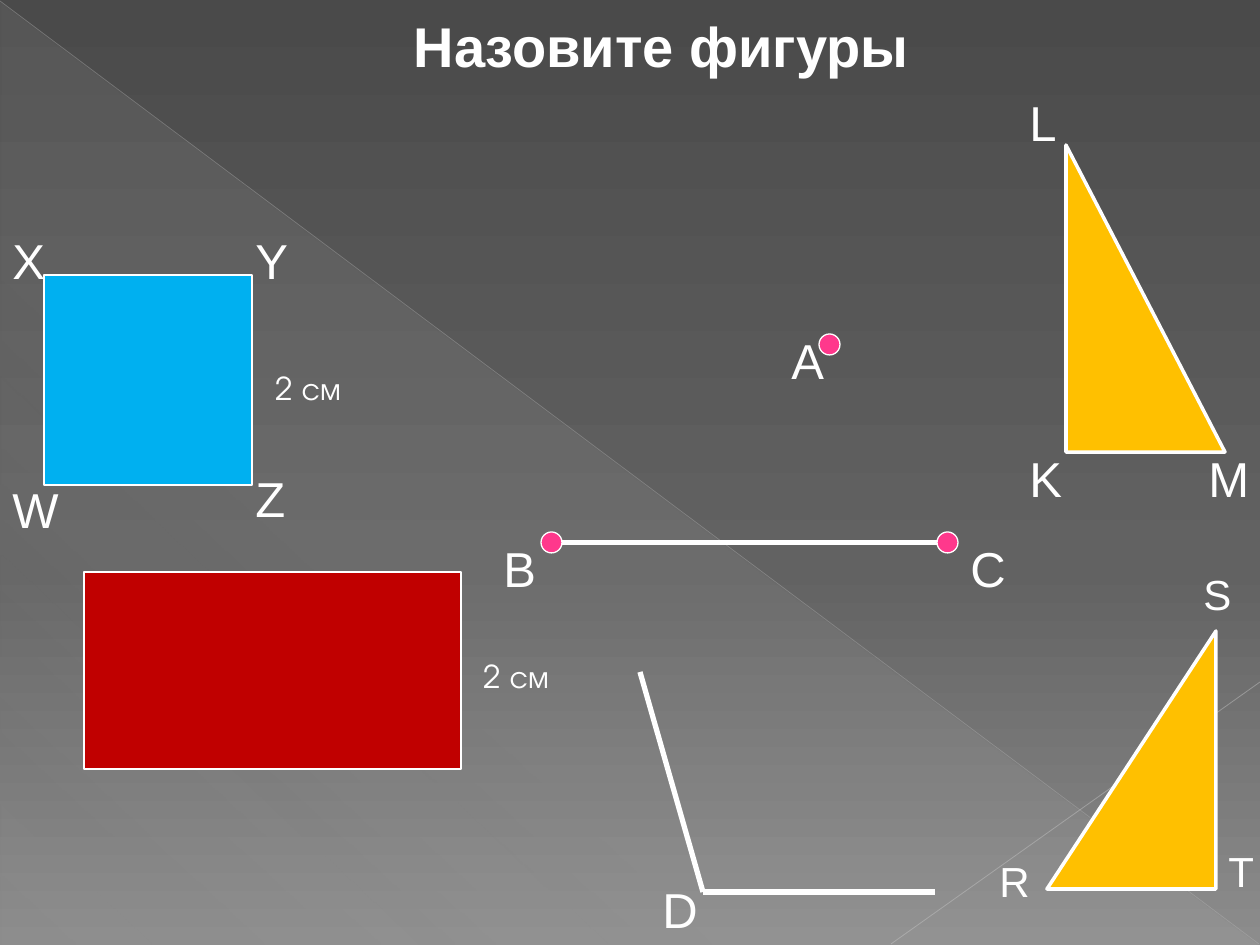
from lxml.etree import SubElement
from pptx import Presentation
from pptx.dml.color import RGBColor
from pptx.enum.shapes import MSO_CONNECTOR, MSO_SHAPE
from pptx.enum.text import MSO_ANCHOR, PP_ALIGN
from pptx.oxml.ns import qn
from pptx.util import Emu, Pt

WHITE, PINK, AMBER = "FFFFFF", "FF388C", "FFC000"
BLUE, RED = "00B0F0", "C00000"
W, H = 1260, 945
DOT = 21


def px(n):
    return Emu(round(n * 914400 / 126))


def color(value):
    return RGBColor.from_string(value)


def set_alpha(clr, percent):
    SubElement(clr, qn("a:alpha")).set("val", str(percent * 1000))


def set_gradient(fill, element, stops, angle):
    """Fill with (position, colour, opacity) stops, angle clockwise."""
    fill.gradient()
    grad = next(element.iter(qn("a:gradFill")))
    gs_list = grad.find(qn("a:gsLst"))
    for gs in list(gs_list):
        gs_list.remove(gs)
    for pos, value, opacity in stops:
        gs = SubElement(gs_list, qn("a:gs"))
        gs.set("pos", str(pos * 1000))
        clr = SubElement(gs, qn("a:srgbClr"))
        clr.set("val", value)
        if opacity < 100:
            set_alpha(clr, opacity)
    grad.find(qn("a:lin")).set("ang", str(angle * 60000))


def write(tf, text, size=28, font="Arial", bold=False, align=PP_ALIGN.LEFT):
    tf.word_wrap = True
    tf.vertical_anchor = MSO_ANCHOR.TOP
    p = tf.paragraphs[0]
    p.alignment = align
    r = p.add_run()
    r.text = text
    r.font.size, r.font.name, r.font.bold = Pt(size), font, bold
    r.font.color.rgb = color(WHITE)


def add_label(slide, text, x, y, w, size=28, font="Arial"):
    h = {28: 72, 24: 63, 18: 50}[size]
    tb = slide.shapes.add_textbox(px(x), px(y), px(w), px(h))
    write(tb.text_frame, text, size=size, font=font)


def add_line(slide, x1, y1, x2, y2, value=WHITE, width=3, opacity=100):
    c = slide.shapes.add_connector(
        MSO_CONNECTOR.STRAIGHT, px(x1), px(y1), px(x2), px(y2))
    c.line.color.rgb = color(value)
    c.line.width = Pt(width)
    if opacity < 100:
        set_alpha(next(c._element.iter(qn("a:srgbClr"))), opacity)
    SubElement(c._element.spPr, qn("a:effectLst"))


def add_figure(slide, kind, x, y, w, h, fill, width=0.75, flip=False):
    s = slide.shapes.add_shape(kind, px(x), px(y), px(w), px(h))
    s.shadow.inherit = False
    s.fill.solid()
    s.fill.fore_color.rgb = color(fill)
    s.line.color.rgb = color(WHITE)
    s.line.width = Pt(width)
    if flip:
        s._element.spPr.xfrm.set("flipH", "1")


def add_labels(slide, x, y, labels, **fmt):
    """Place (text, dx, dy, width) labels around the corner x, y."""
    for text, dx, dy, w in labels:
        add_label(slide, text, x + dx, y + dy, w, **fmt)


def build_background(slide):
    set_gradient(slide.background.fill, slide._element,
                 [(0, "4A4A4A", 100), (60, "626262", 100), (100, "8C8C8C", 100)], 90)
    s = slide.shapes.add_shape(MSO_SHAPE.RIGHT_TRIANGLE, px(1), px(2), px(W - 2), px(H - 2))
    s.shadow.inherit = False
    s.line.fill.background()
    set_gradient(s.fill, s._element,
                 [(0, "D2D2D2", 10), (70, "D2D2D2", 8), (100, "D2D2D2", 1)], 133)
    add_line(slide, 0, 1, W - 1, H - 1, "BFBFBF", 0.39, 35)
    add_line(slide, W, 682, 891, H - 1, "C6C6C6", 0.47, 45)


def build_title(slide, x, y, w, h):
    title = slide.shapes.title
    title.left, title.top, title.width, title.height = px(x), px(y), px(w), px(h)
    title.text_frame.margin_top = px(11)
    write(title.text_frame, "Назовите фигуры", size=32, bold=True, align=PP_ALIGN.CENTER)
    slide.shapes._spTree.append(title._element)  # in front of the background


def build_rectangle(slide, x, y, w, h, fill, side_label, corners=()):
    add_figure(slide, MSO_SHAPE.RECTANGLE, x, y, w, h, fill)
    add_labels(slide, x, y, corners)
    add_labels(slide, x, y, [side_label], size=18, font="TeX Gyre Adventor")


def build_triangle(slide, x, y, w, h, corners, size=28, flip=False):
    add_figure(slide, MSO_SHAPE.RIGHT_TRIANGLE, x, y, w, h, AMBER, 2, flip)
    add_labels(slide, x, y, corners, size=size)


def build_point(slide, x, y, label):
    add_figure(slide, MSO_SHAPE.OVAL, x, y, DOT, DOT, PINK)
    add_labels(slide, x, y, [label])


def build_segment(slide, x, y, length):
    add_line(slide, x + DOT / 2, y + DOT / 2, x + length, y + DOT / 2)
    build_point(slide, x, y, ("B", -50, 0, 89))
    build_point(slide, x + length, y, ("C", 21, 0, 69))


def build_angle(slide, x, y):
    add_line(slide, x - 63, y - 220, x, y)
    add_line(slide, x, y, x + 232, y)
    add_labels(slide, x, y, [("D", -53, -19, 49)])


def main():
    prs = Presentation()
    prs.slide_width, prs.slide_height = px(W), px(H)
    slide = prs.slides.add_slide(prs.slide_layouts[5])

    build_background(slide)
    build_title(slide, 63, 0, 1197, 118)

    # Quadrilaterals
    build_rectangle(slide, 84, 572, 377, 197, RED, ("2 см", 387, 79, 118))
    build_rectangle(slide, 44, 275, 208, 210, BLUE, ("2 см", 219, 88, 149),
                    [("X", -44, -51, 59), ("Y", 199, -51, 59),
                     ("Z", 199, 187, 55), ("W", -44, 198, 49)])

    # Point, segment and angle
    build_point(slide, 819, 334, ("A", -40, -10, 69))
    build_segment(slide, 541, 532, 396)
    build_angle(slide, 703, 892)

    # Triangles
    build_triangle(slide, 1066, 145, 159, 307,
                   [("L", -49, -59, 49), ("K", -49, 297, 59), ("M", 130, 297, 44)])
    build_triangle(slide, 1047, 631, 169, 258,
                   [("R", -60, 218, 69), ("S", 144, -69, 69), ("T", 169, 208, 44)],
                   size=24, flip=True)

    prs.save("out.pptx")


if __name__ == "__main__":
    main()
